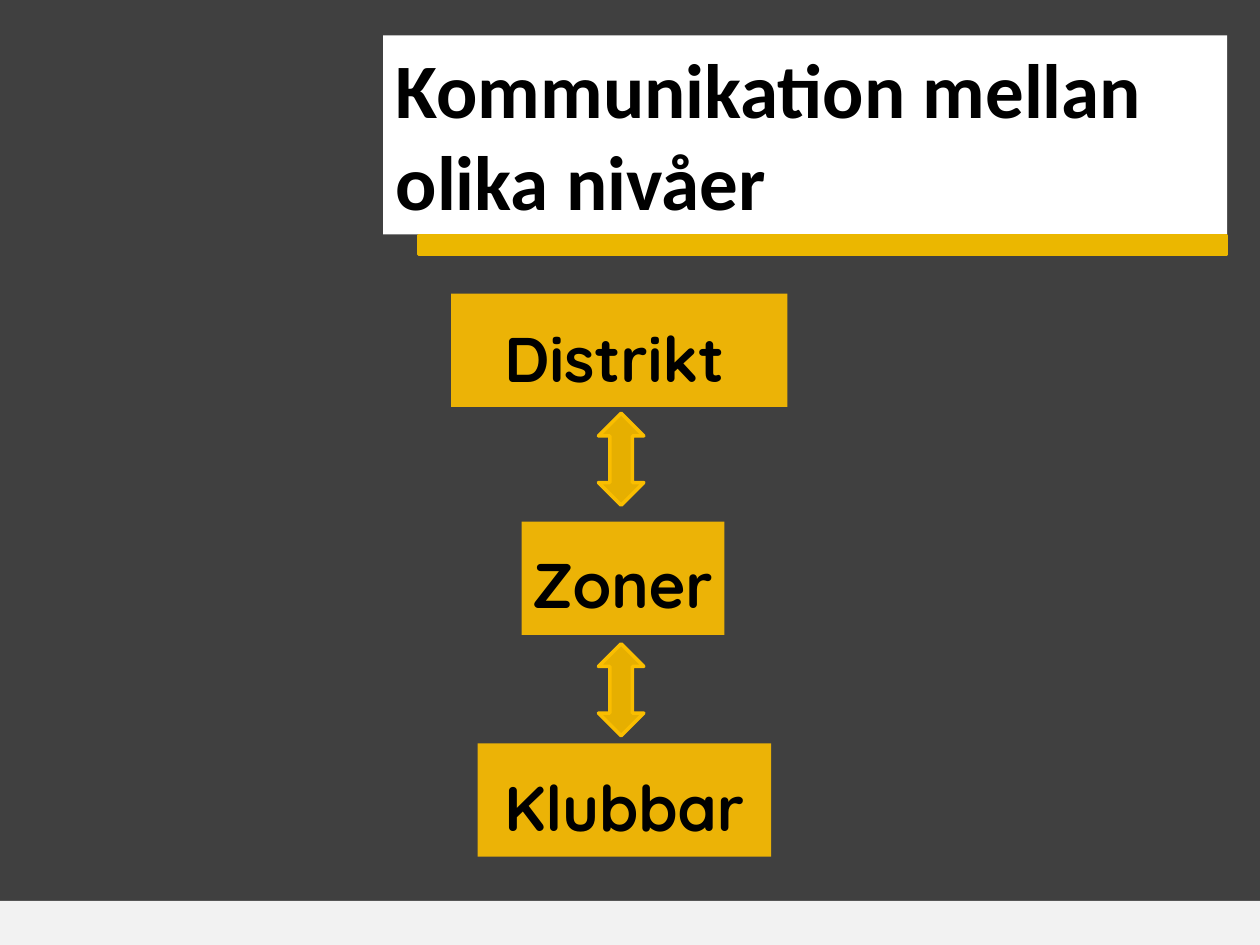
from lxml import etree
from pptx import Presentation
from pptx.dml.color import RGBColor
from pptx.enum.shapes import MSO_SHAPE
from pptx.enum.text import MSO_ANCHOR, MSO_AUTO_SIZE, PP_ALIGN
from pptx.oxml.ns import qn
from pptx.util import Inches, Pt

RECT = MSO_SHAPE.RECTANGLE
ARROW = MSO_SHAPE.UP_DOWN_ARROW
LEFT, CENTER = PP_ALIGN.LEFT, PP_ALIGN.CENTER
TOP = MSO_ANCHOR.TOP
NO_FIT = MSO_AUTO_SIZE.NONE

DARK = RGBColor(0x40, 0x40, 0x40)
PALE = RGBColor(0xF2, 0xF2, 0xF2)
WHITE = RGBColor(0xFF, 0xFF, 0xFF)
BLACK = RGBColor(0x00, 0x00, 0x00)
AMBER = RGBColor(0xFF, 0xC0, 0x00)
GOLD = RGBColor(0xEB, 0xB7, 0x00)
ARROW_FILL = RGBColor(0xE6, 0xAF, 0x00)
ARROW_LINE = RGBColor(0xFA, 0xBE, 0x00)

SLIDE_W, SLIDE_H = 10, 7.5
FOOTER_H = 0.35
LEVEL_H, LABEL_H = 0.9, 0.71
ARROW_X, ARROW_W, ARROW_H = 4.75, 0.36, 0.73
LEVELS = [
    ("Distrikt", 2.33, (3.58, 2.67), (3.79, 2.17), 0.16),
    ("Zoner", 4.14, (4.14, 1.61), (4.03, 1.82), 0.14),
    ("Klubbar", 5.9, (3.79, 2.33), (3.83, 2.25), 0.15),
]
ARROW_TOPS = [3.28, 5.11]


def add_block(slide, kind, box, fill, line=None, alpha=None):
    sp = slide.shapes.add_shape(kind, *map(Inches, box))
    sp.shadow.inherit = False
    sp.fill.solid()
    sp.fill.fore_color.rgb = fill
    if alpha:
        clr = sp._element.spPr.find(qn("a:solidFill"))[0]
        etree.SubElement(clr, qn("a:alpha"), val=str(alpha * 1000))
    if line:
        sp.line.color.rgb = line
        sp.line.width = Pt(2)
    else:
        sp.line.fill.background()
    return sp


def write_text(sp, text, font="Quicksand", size=36, align=CENTER):
    tf = sp.text_frame
    tf.word_wrap = True
    tf.auto_size = NO_FIT
    tf.vertical_anchor = TOP
    p = tf.paragraphs[0]
    p.alignment = align
    r = p.add_run()
    r.text = text
    r.font.name = font
    r.font.size = Pt(size)
    r.font.bold = True
    r.font.color.rgb = BLACK


def add_title(slide, text):
    sp = slide.shapes.title
    sp.left, sp.top, sp.width, sp.height = map(Inches, (3.04, 0.28, 6.7, 1.58))
    sp.fill.solid()
    sp.fill.fore_color.rgb = WHITE
    write_text(sp, text, font="Calibri", size=44, align=LEFT)
    add_block(slide, RECT, (3.32, 1.87, 6.41, 0.15), GOLD, line=GOLD)


def add_level(slide, text, top, block, label, offset):
    x, w = block
    add_block(slide, RECT, (x, top, w, LEVEL_H), AMBER, alpha=90)
    x, w = label
    box = (x, top + offset, w, LABEL_H)
    write_text(slide.shapes.add_textbox(*map(Inches, box)), text)


def main():
    prs = Presentation()
    prs.slide_width, prs.slide_height = Inches(SLIDE_W), Inches(SLIDE_H)
    slide = prs.slides.add_slide(prs.slide_layouts[5])
    slide.background.fill.solid()
    slide.background.fill.fore_color.rgb = DARK
    add_block(slide, RECT, (0, SLIDE_H - FOOTER_H, SLIDE_W, FOOTER_H), PALE)
    add_title(slide, "Kommunikation mellan olika nivåer")
    for level in LEVELS:
        add_level(slide, *level)
    for top in ARROW_TOPS:
        add_block(slide, ARROW, (ARROW_X, top, ARROW_W, ARROW_H),
                  ARROW_FILL, line=ARROW_LINE)
    prs.save("out.pptx")


if __name__ == "__main__":
    main()
